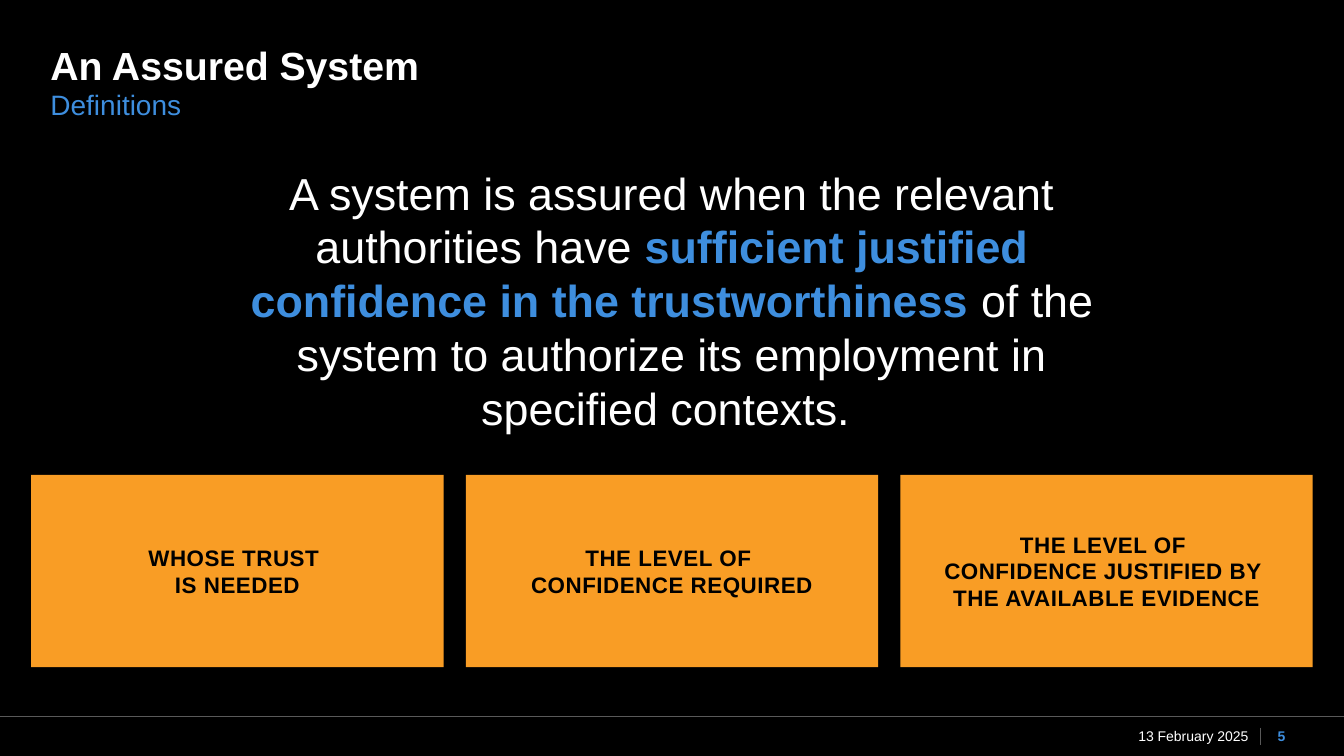
from dataclasses import dataclass

from lxml.etree import SubElement
from pptx import Presentation
from pptx.dml.color import RGBColor
from pptx.enum.shapes import MSO_CONNECTOR, MSO_SHAPE
from pptx.enum.text import MSO_ANCHOR as Anchor, PP_ALIGN as Align
from pptx.oxml.ns import qn
from pptx.util import Inches, Pt

SLIDE_WIDTH, SLIDE_HEIGHT = 13.33, 7.5


@dataclass(frozen=True)
class Theme:
    font: str = "Arial"
    background: str = "000000"
    text: str = "FFFFFF"
    accent: str = "3E8EDE"
    card: str = "F99D25"
    card_text: str = "000000"
    rule: str = "595959"
    title_size: int = 28
    subtitle_size: int = 20
    statement_size: int = 32
    card_size: int = 16
    footer_size: int = 10
    card_tracking: float = 0.4
    rule_width: float = 0.5


def write(frame, runs, *, size, font, align=Align.LEFT, anchor=Anchor.TOP,
          side_inset=0, line_spacing=None, tracking=None):
    """Fill a frame with one paragraph of (text, colour, bold) runs; newlines become line breaks."""
    frame.word_wrap = True
    frame.vertical_anchor = anchor
    frame.margin_left = frame.margin_right = Inches(side_inset)
    frame.margin_top = frame.margin_bottom = 0
    paragraph = frame.paragraphs[0]
    paragraph.alignment = align
    paragraph.line_spacing = line_spacing
    paragraph.font.size = Pt(size)
    for text, colour, bold in runs:
        for number, line in enumerate(text.split("\n")):
            if number:
                paragraph.add_line_break()
            run = paragraph.add_run()
            run.text = line
            run.font.name = font
            run.font.size = Pt(size)
            run.font.bold = bold
            run.font.color.rgb = RGBColor.from_string(colour)
            if tracking:
                run.font._element.set("spc", str(round(tracking * 100)))


class SlideBuilder:
    def __init__(self, slide, theme):
        self.slide = slide
        self.theme = theme
        fill = slide.background.fill
        fill.solid()
        fill.fore_color.rgb = RGBColor.from_string(theme.background)

    def text(self, box, runs, **text_format):
        label = self.slide.shapes.add_textbox(*map(Inches, box))
        write(label.text_frame, runs, font=self.theme.font, **text_format)

    def card(self, box, caption):
        theme = self.theme
        card = self.slide.shapes.add_shape(MSO_SHAPE.RECTANGLE, *map(Inches, box))
        card.shadow.inherit = False
        card.fill.solid()
        card.fill.fore_color.rgb = RGBColor.from_string(theme.card)
        card.line.fill.background()
        write(card.text_frame, [(caption, theme.card_text, True)], font=theme.font,
              size=theme.card_size, align=Align.CENTER, anchor=Anchor.MIDDLE,
              tracking=theme.card_tracking)

    def rule(self, *ends):
        rule = self.slide.shapes.add_connector(MSO_CONNECTOR.STRAIGHT, *map(Inches, ends))
        rule.line.color.rgb = RGBColor.from_string(self.theme.rule)
        rule.line.width = Pt(self.theme.rule_width)
        SubElement(rule._element.spPr, qn("a:effectLst"))


def main():
    presentation = Presentation()
    presentation.slide_width = Inches(SLIDE_WIDTH)
    presentation.slide_height = Inches(SLIDE_HEIGHT)
    theme = Theme()
    builder = SlideBuilder(
        presentation.slides.add_slide(presentation.slide_layouts[6]), theme)

    footer_top, footer_height = 7.11, 0.39
    builder.rule(0, footer_top, SLIDE_WIDTH, footer_top)
    builder.rule(12.5, 7.22, 12.5, 7.39)

    builder.text((0.5, 0.46, 12.33, 0.37), [("An Assured System", theme.text, True)],
                 size=theme.title_size, line_spacing=0.9)
    builder.text((0.5, 0.87, 12.33, 0.42), [("Definitions", theme.accent, False)],
                 size=theme.subtitle_size)
    builder.text((2.18, 1.64, 8.97, 3.43), [
        ("A system is assured when the relevant authorities have ", theme.text, False),
        ("sufficient justified confidence in the trustworthiness ", theme.accent, True),
        ("of the system to authorize its employment in specified contexts. ",
         theme.text, False),
    ], size=theme.statement_size, align=Align.CENTER)

    captions = (
        "WHOSE TRUST \nIS NEEDED",
        "THE LEVEL OF \nCONFIDENCE REQUIRED",
        "THE LEVEL OF \nCONFIDENCE JUSTIFIED BY \nTHE AVAILABLE EVIDENCE",
    )
    card_width, card_gap = 4.09, 0.22
    card_pitch = card_width + card_gap
    first_left = (SLIDE_WIDTH - len(captions) * card_pitch + card_gap) / 2
    for column, caption in enumerate(captions):
        builder.card((first_left + column * card_pitch, 4.71, card_width, 1.91), caption)

    builder.text((10.98, footer_top, 1.5, footer_height),
                 [("13 February 2025", theme.text, False)], size=theme.footer_size,
                 align=Align.RIGHT, anchor=Anchor.MIDDLE, side_inset=0.1)
    builder.text((12.51, footer_top, 0.4, footer_height), [("5", theme.accent, True)],
                 size=theme.footer_size, align=Align.CENTER, anchor=Anchor.MIDDLE)

    presentation.save("out.pptx")


if __name__ == "__main__":
    main()
